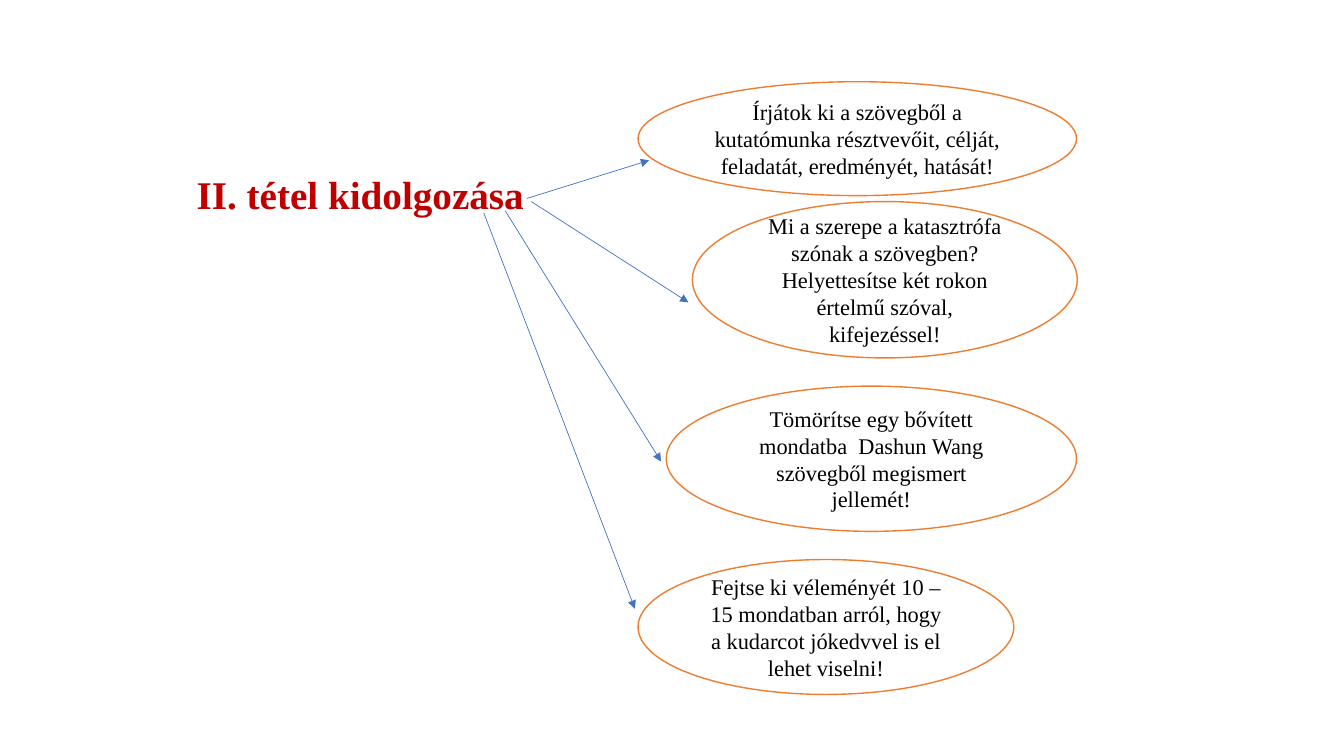
from lxml.etree import SubElement
from pptx import Presentation
from pptx.dml.color import RGBColor
from pptx.enum.shapes import MSO_CONNECTOR, MSO_SHAPE
from pptx.enum.text import MSO_ANCHOR, MSO_AUTO_SIZE, PP_ALIGN
from pptx.oxml.ns import qn
from pptx.util import Cm, Pt

FONT = "Times New Roman"
WHITE, BLACK, RED = "FFFFFF", "000000", "C00000"
BLUE, ORANGE = "4472C4", "ED7D31"

TASKS = [
    ("Írjátok ki a szövegből a kutatómunka résztvevőit, célját, feladatát, eredményét, hatását!",
     (16.08, 2.06, 11.05, 2.87), (13.28, 5.0, 16.36, 4.04)),
    ("Mi a szerepe a katasztrófa szónak a szövegben? Helyettesítse két rokon értelmű szóval, kifejezéssel!",
     (17.45, 5.08, 9.7, 3.94), (13.39, 5.08, 17.35, 7.62)),
    ("Tömörítse egy bővített mondatba  Dashun Wang szövegből megismert jellemét!",
     (16.79, 9.73, 10.34, 3.66), (12.73, 5.31, 16.66, 11.63)),
    ("Fejtse ki véleményét 10 – 15 mondatban arról, hogy a kudarcot jókedvvel is el lehet viselni!",
     (16.08, 14.1, 9.47, 3.4), (12.19, 5.36, 16.0, 15.34)),
]


def color(value):
    return RGBColor.from_string(value)


def lengths(values):
    return [Cm(value) for value in values]


def write_text(shape, text, size=16, fill=BLACK, bold=False, align=PP_ALIGN.CENTER,
               anchor=MSO_ANCHOR.MIDDLE, spacing=1.0):
    frame = shape.text_frame
    frame.word_wrap = True
    frame.auto_size = MSO_AUTO_SIZE.NONE
    frame.vertical_anchor = anchor
    paragraph = frame.paragraphs[0]
    paragraph.alignment = align
    paragraph.line_spacing = spacing
    run = paragraph.add_run()
    run.text = text
    run.font.name = FONT
    run.font.size = Pt(size)
    run.font.bold = bold
    run.font.color.rgb = color(fill)


def place_title(slide, text, box):
    title = slide.shapes.title
    title.left, title.top, title.width, title.height = lengths(box)
    write_text(title, text, size=28, fill=RED, bold=True, align=PP_ALIGN.LEFT,
               anchor=MSO_ANCHOR.BOTTOM, spacing=0.9)


def add_arrow(slide, ends):
    arrow = slide.shapes.add_connector(MSO_CONNECTOR.STRAIGHT, *lengths(ends))
    arrow.line.color.rgb = color(BLUE)
    arrow.line.width = Pt(0.5)
    SubElement(arrow.line._get_or_add_ln(), qn("a:tailEnd"), type="triangle")
    SubElement(arrow._element.spPr, qn("a:effectLst"))


def add_task(slide, text, box):
    ellipse = slide.shapes.add_shape(MSO_SHAPE.OVAL, *lengths(box))
    ellipse.shadow.inherit = False
    ellipse.fill.solid()
    ellipse.fill.fore_color.rgb = color(WHITE)
    ellipse.line.color.rgb = color(ORANGE)
    ellipse.line.width = Pt(1)
    write_text(ellipse, text)


def main():
    presentation = Presentation()
    presentation.slide_width, presentation.slide_height = Cm(33.87), Cm(19.05)
    slide = presentation.slides.add_slide(presentation.slide_layouts[5])
    place_title(slide, "II. tétel kidolgozása", (4.7, 3.12, 24.94, 2.51))
    for text, box, ends in TASKS:
        add_arrow(slide, ends)
        add_task(slide, text, box)
    presentation.save("out.pptx")


if __name__ == "__main__":
    main()
